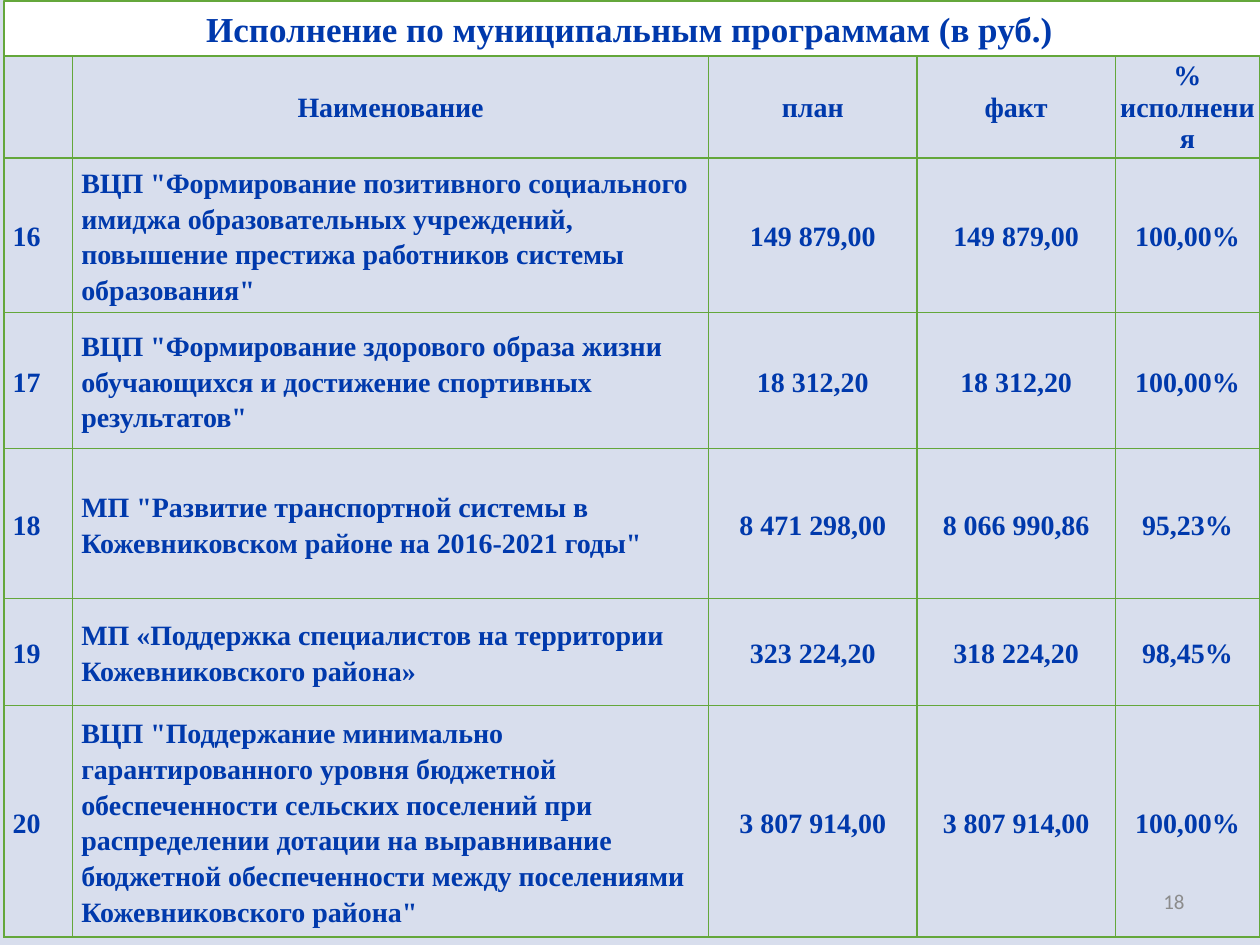
from lxml.etree import SubElement
from pptx import Presentation
from pptx.dml.color import RGBColor
from pptx.enum.shapes import MSO_SHAPE
from pptx.enum.text import MSO_ANCHOR as ANCHOR, MSO_AUTO_SIZE as AUTO, PP_ALIGN as ALIGN
from pptx.oxml.ns import qn
from pptx.util import Pt

COLORS = {"bg": "D8DEED", "white": "FFFFFF", "green": "64A73B",
          "blue": "0039AC", "gray": "8C8C8C"}
SERIF = {"name": "Times New Roman", "bold": True}
TABLE_FONT = {**SERIF, "size": Pt(16)}
HEADER_CELL = {"margin_left": Pt(0.7), "margin_right": Pt(0.7),
               "margin_top": Pt(0.7), "margin_bottom": Pt(0)}
BODY_CELL = {"margin_left": Pt(5), "margin_right": Pt(5),
             "margin_top": Pt(0), "margin_bottom": Pt(0)}
COL_WIDTHS = [39.2, 363.5, 119, 113.4, 82.4]
ROW_HEIGHTS = [58.3, 88.2, 77.7, 85.7, 61.2, 132]
ROWS = [
    ["", "Наименование", "план", "факт", "% исполнения"],
    ["16", "ВЦП \"Формирование позитивного социального имиджа образовательных учреждений, "
           "повышение престижа работников системы образования\"",
     "149 879,00", "149 879,00", "100,00%"],
    ["17", "ВЦП \"Формирование здорового образа жизни обучающихся и достижение "
           "спортивных результатов\"",
     "18 312,20", "18 312,20", "100,00%"],
    ["18", "МП \"Развитие транспортной системы в Кожевниковском районе на 2016-2021 годы\"",
     "8 471 298,00", "8 066 990,86", "95,23%"],
    ["19", "МП «Поддержка специалистов на территории Кожевниковского района»",
     "323 224,20", "318 224,20", "98,45%"],
    ["20", "ВЦП \"Поддержание минимально гарантированного уровня бюджетной обеспеченности "
           "сельских поселений при распределении дотации на выравнивание бюджетной "
           "обеспеченности между поселениями Кожевниковского района\"",
     "3 807 914,00", "3 807 914,00", "100,00%"],
]


def rgb(key):
    return RGBColor.from_string(COLORS[key])


def apply(obj, values):
    for name, value in values.items():
        setattr(obj, name, value)


def write(tf, text, color, font, align, spacing=None):
    p = tf.paragraphs[0]
    apply(p, {"alignment": align, "line_spacing": spacing})
    r = p.add_run()
    r.text = text
    apply(r.font, font)
    r.font.color.rgb = rgb(color)


def add_borders(cell):
    tc_pr = cell._tc.get_or_add_tcPr()
    for side in ("lnL", "lnR", "lnT", "lnB"):
        ln = SubElement(tc_pr, qn(f"a:{side}"), w=str(Pt(1)))
        fill = SubElement(ln, qn("a:solidFill"))
        SubElement(fill, qn("a:srgbClr"), val=COLORS["green"])


def add_title(slide):
    sp = slide.shapes.add_shape(MSO_SHAPE.RECTANGLE, Pt(2.3), Pt(0.5), Pt(720), Pt(31.5))
    sp.shadow.inherit = False
    sp.fill.solid()
    sp.fill.fore_color.rgb = rgb("white")
    sp.line.color.rgb = rgb("green")
    sp.line.width = Pt(1.25)
    apply(sp.text_frame, {"word_wrap": True, "vertical_anchor": ANCHOR.TOP,
                          "auto_size": AUTO.SHAPE_TO_FIT_TEXT})
    write(sp.text_frame, "Исполнение по муниципальным программам (в руб.) ",
          "blue", {**SERIF, "size": Pt(20)}, ALIGN.CENTER)


def add_program_table(slide):
    table = slide.shapes.add_table(len(ROWS), len(COL_WIDTHS), Pt(2.3), Pt(32),
                                   Pt(sum(COL_WIDTHS)), Pt(sum(ROW_HEIGHTS))).table
    for col, width in zip(table.columns, COL_WIDTHS):
        col.width = Pt(width)
    for i, (texts, height) in enumerate(zip(ROWS, ROW_HEIGHTS)):
        table.rows[i].height = Pt(height)
        for j, text in enumerate(texts):
            cell = table.cell(i, j)
            apply(cell, BODY_CELL if i else HEADER_CELL)
            cell.vertical_anchor = ANCHOR.MIDDLE
            add_borders(cell)
            cell.fill.background()
            if text:
                align = ALIGN.LEFT if i and j < 2 else ALIGN.CENTER
                write(cell.text_frame, text, "blue", TABLE_FONT, align, 1.15 if i else None)


def add_page_number(slide):
    tf = slide.shapes.add_textbox(Pt(516), Pt(500.5), Pt(168), Pt(28.8)).text_frame
    apply(tf, {"word_wrap": True, "vertical_anchor": ANCHOR.MIDDLE})
    write(tf, "18", "gray", {"name": "Calibri", "size": Pt(12)}, ALIGN.RIGHT)


def main():
    prs = Presentation()
    apply(prs, {"slide_width": Pt(720), "slide_height": Pt(540)})
    slide = prs.slides.add_slide(prs.slide_layouts[6])
    slide.background.fill.solid()
    slide.background.fill.fore_color.rgb = rgb("bg")
    add_page_number(slide)
    add_title(slide)
    add_program_table(slide)
    prs.save("out.pptx")


if __name__ == "__main__":
    main()
